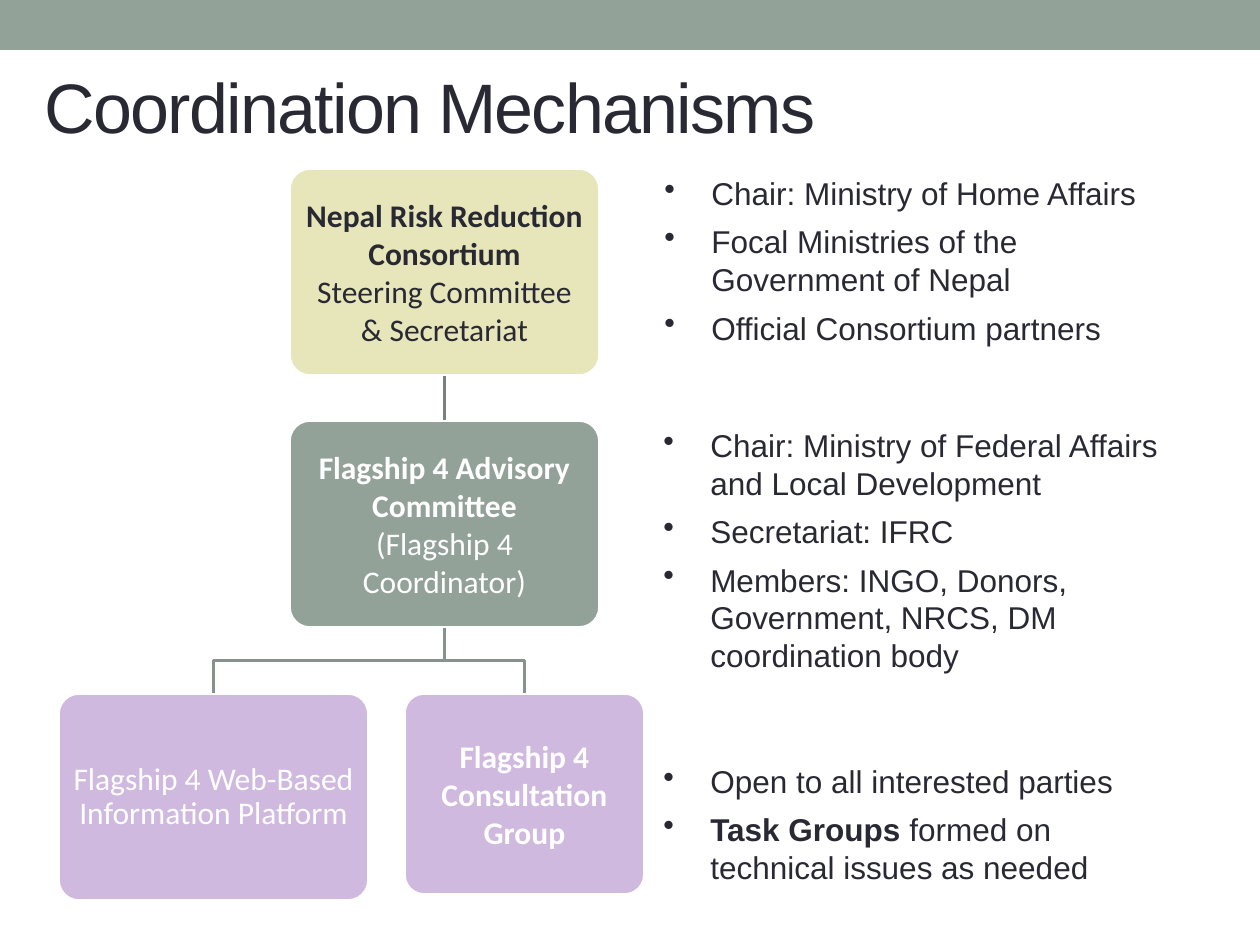
from lxml import etree
from pptx import Presentation
from pptx.dml.color import RGBColor
from pptx.enum.shapes import MSO_CONNECTOR, MSO_SHAPE
from pptx.enum.text import MSO_ANCHOR, MSO_AUTO_SIZE, PP_ALIGN
from pptx.oxml.ns import qn
from pptx.util import Emu, Pt

STRAIGHT = MSO_CONNECTOR.STRAIGHT
RECTANGLE, ROUNDED = MSO_SHAPE.RECTANGLE, MSO_SHAPE.ROUNDED_RECTANGLE
MIDDLE = MSO_ANCHOR.MIDDLE
GROW = MSO_AUTO_SIZE.SHAPE_TO_FIT_TEXT
LEFT, CENTER = PP_ALIGN.LEFT, PP_ALIGN.CENTER
TOP_SIDE, BOTTOM_SIDE = 0, 2

INK = RGBColor(0x29, 0x29, 0x34)
WHITE = RGBColor(0xFF, 0xFF, 0xFF)
SAGE = RGBColor(0x93, 0xA2, 0x99)
CREAM = RGBColor(0xE7, 0xE5, 0xBA)
LILAC = RGBColor(0xCF, 0xB9, 0xDE)
TRUNK = RGBColor(0x76, 0x82, 0x7B)
BRANCH = RGBColor(0x85, 0x93, 0x8B)

EMU_PER_PX = 914400 / 126
LINE_WIDTH = Pt(2.08)
TEXT_SIZE = Pt(18)


def px(length):
    return Emu(round(length * EMU_PER_PX))


class ChartSlide:
    """Holds the slide being drawn and the style its elements share."""

    def __init__(self, slide, body_font="Arial", box_font="Calibri"):
        self.slide = slide
        self.shapes = slide.shapes
        self.body_font = body_font
        self.box_font = box_font

    def set_font(self, paragraph, name, size, color):
        paragraph.font.name = name
        paragraph.font.size = size
        paragraph.font.color.rgb = color

    def title(self, text, *frame):
        title = self.shapes.title
        title.left, title.top, title.width, title.height = map(px, frame)
        title.text_frame.text = text
        title.text_frame.vertical_anchor = MIDDLE
        paragraph = title.text_frame.paragraphs[0]
        paragraph.alignment = LEFT
        self.set_font(paragraph, self.body_font, Pt(40), INK)
        paragraph.runs[0].font._element.set("spc", "-100")

    def band(self, *frame):
        band = self.shapes.add_shape(RECTANGLE, *map(px, frame))
        band.shadow.inherit = False
        band.fill.solid()
        band.fill.fore_color.rgb = SAGE
        band.line.fill.background()

    def box(self, frame, fill, color, lines, line_spacing=None):
        """Add a rounded box; lines are (text, bold) pairs."""
        box = self.shapes.add_shape(ROUNDED, *map(px, frame))
        box.adjustments[0] = 0.1
        box.shadow.inherit = False
        box.fill.solid()
        box.fill.fore_color.rgb = fill
        box.line.color.rgb = WHITE
        box.line.width = LINE_WIDTH
        text_frame = box.text_frame
        text_frame.word_wrap = True
        text_frame.vertical_anchor = MIDDLE
        text_frame.margin_left = text_frame.margin_right = px(9)
        text_frame.margin_top = text_frame.margin_bottom = px(9)
        text_frame.text = "\n".join(text for text, _ in lines)
        for paragraph, (_, bold) in zip(text_frame.paragraphs, lines):
            paragraph.alignment = CENTER
            paragraph.line_spacing = line_spacing
            self.set_font(paragraph, self.box_font, TEXT_SIZE, color)
            paragraph.font.bold = bold
        return box

    def trunk(self, upper, lower):
        connector = self.shapes.add_connector(STRAIGHT, 0, 0, 0, 0)
        connector.begin_connect(upper, BOTTOM_SIDE)
        connector.end_connect(lower, TOP_SIDE)
        connector.line.color.rgb = TRUNK
        connector.line.width = LINE_WIDTH
        etree.SubElement(connector._element.spPr, qn("a:effectLst"))

    def branch(self, upper, lower):
        """Draw a bent line from the bottom of one box to the top of another."""
        start_x = upper.left + upper.width // 2
        start_y = upper.top + upper.height
        end_x = lower.left + lower.width // 2
        middle_y = (start_y + lower.top) // 2
        builder = self.shapes.build_freeform(start_x, start_y)
        builder.add_line_segments(
            [(start_x, middle_y), (end_x, middle_y), (end_x, lower.top)], close=False)
        line = builder.convert_to_shape()
        line.shadow.inherit = False
        line.fill.background()
        line.line.color.rgb = BRANCH
        line.line.width = LINE_WIDTH

    def bullets(self, frame, items):
        """Add a bulleted list; each item is a list of (text, bold) runs."""
        text_frame = self.shapes.add_textbox(*map(px, frame)).text_frame
        text_frame.word_wrap = True
        text_frame.auto_size = GROW
        for index, runs in enumerate(items):
            paragraph = text_frame.add_paragraph() if index else text_frame.paragraphs[0]
            paragraph.space_before = Pt(6)
            self.set_font(paragraph, self.body_font, TEXT_SIZE, INK)
            properties = paragraph._p.get_or_add_pPr()
            properties.set("marL", str(px(47)))
            properties.set("indent", str(-px(47)))
            bullet = etree.Element(qn("a:buChar"), char="•")
            properties.find(qn("a:defRPr")).addprevious(bullet)
            for text, bold in runs:
                run = paragraph.add_run()
                run.text = text
                run.font.bold = bold


def main():
    presentation = Presentation()
    presentation.slide_width, presentation.slide_height = px(1260), px(945)
    title_only = presentation.slide_layouts[5]
    chart = ChartSlide(presentation.slides.add_slide(title_only))

    chart.band(0, 0, 1260, 50)
    chart.title("Coordination Mechanisms", 32, 53, 1176, 105)

    consortium = chart.box((289, 168, 311, 208), CREAM, INK, [
        ("Nepal Risk Reduction Consortium", True),
        ("Steering Committee & Secretariat", False)])
    advisory = chart.box((289, 420, 311, 208), SAGE, WHITE, [
        ("Flagship 4 Advisory Committee", True),
        ("(Flagship 4 Coordinator)", False)])
    consultation = chart.box((404, 693, 241, 202), LILAC, WHITE, [
        ("Flagship 4 Consultation Group", True)])
    platform = chart.box((58, 693, 311, 208), LILAC, WHITE, [
        ("Flagship 4 Web-Based Information Platform", False)], line_spacing=0.9)

    chart.trunk(consortium, advisory)
    for group in (consultation, platform):
        chart.branch(advisory, group)

    chart.bullets((652, 168, 546, 224), [
        [("Chair: Ministry of Home Affairs", False)],
        [("Focal Ministries of the Government of Nepal", False)],
        [("Official Consortium partners", False)]])
    chart.bullets((651, 420, 567, 263), [
        [("Chair: Ministry of Federal Affairs and Local Development", False)],
        [("Secretariat: IFRC", False)],
        [("Members: INGO, Donors, Government, NRCS, DM coordination body", False)]])
    chart.bullets((651, 756, 514, 137), [
        [("Open to all interested parties", False)],
        [("Task Groups ", True), ("formed on technical issues as needed", False)]])

    presentation.save("out.pptx")


if __name__ == "__main__":
    main()
